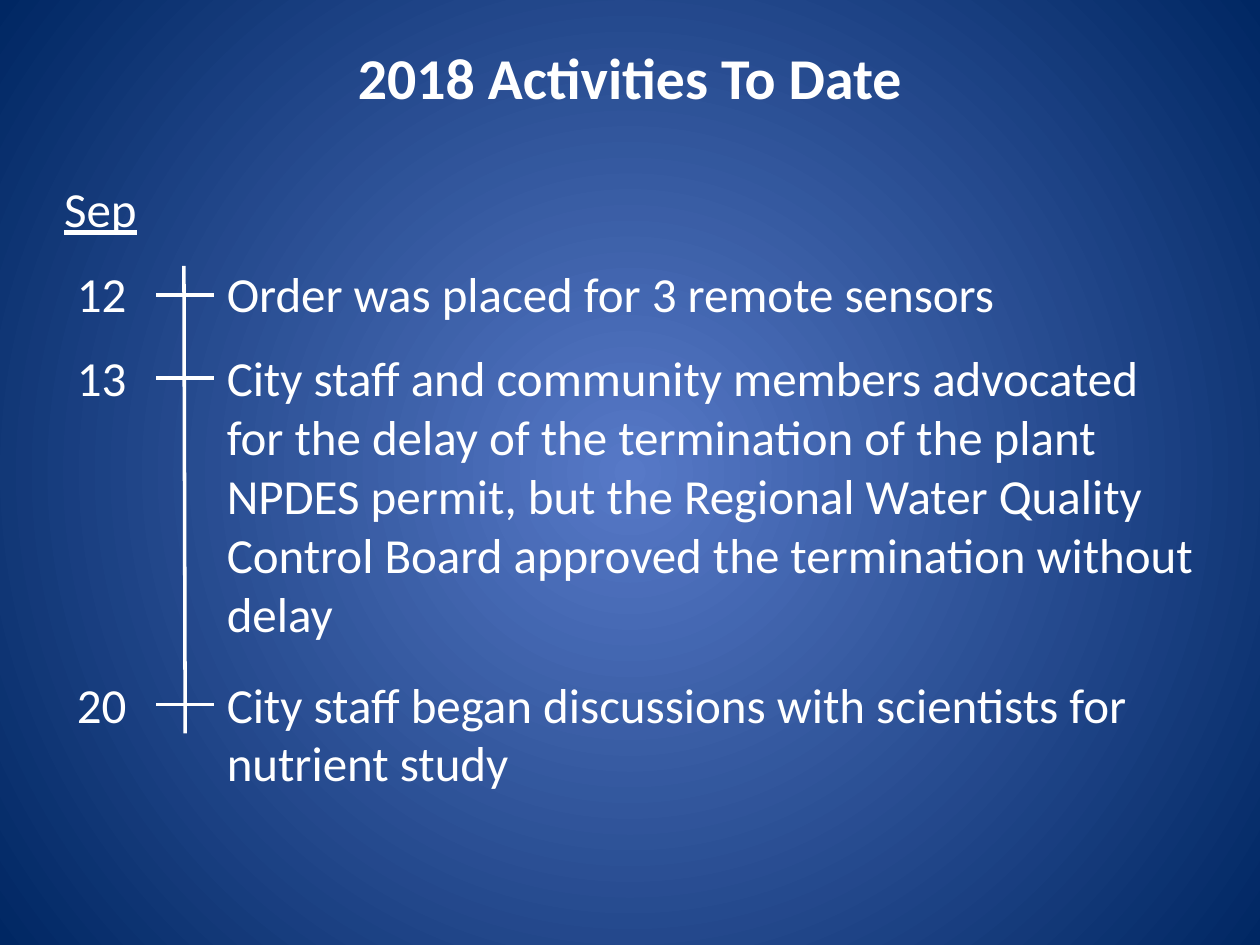
from lxml import etree
from pptx import Presentation
from pptx.dml.color import RGBColor
from pptx.enum.shapes import MSO_CONNECTOR as Connector
from pptx.enum.text import MSO_ANCHOR as Anchor, PP_ALIGN as Align
from pptx.oxml.ns import qn
from pptx.util import Emu, Pt

PX = 9144  # 100 px to the inch
WIDTH, HEIGHT = 1000, 750
FONT = "Calibri"
WHITE = RGBColor(0xFF, 0xFF, 0xFF)
GLOW = RGBColor(0x57, 0x79, 0xC7)
NAVY = RGBColor(0x00, 0x27, 0x63)

# Day, top of its row, height of its text, tick offset, text
EVENTS = [
    ("12", 205, 63, 29, "Order was placed for 3 remote sensors"),
    ("13", 272, 240, 28,
     "City staff and community members advocated for the delay of the "
     "termination of the plant NPDES permit, but the Regional Water Quality "
     "Control Board approved the termination without delay"),
    ("20", 531, 99, 28,
     "City staff began discussions with scientists for nutrient study"),
]


def px(*lengths):
    return [Emu(length * PX) for length in lengths]


def write(frame, text, size, inset=4):
    frame.word_wrap = True
    frame.margin_left = frame.margin_right = Emu(inset * PX)
    frame.margin_top = frame.margin_bottom = Emu(min(inset, 5) * PX)
    frame.text = text
    font = frame.paragraphs[0].runs[0].font
    font.name, font.size, font.color.rgb = FONT, Pt(size), WHITE
    return font


def add_text(page, left, top, width, height, text, inset=4):
    box = page.shapes.add_textbox(*px(left, top, width, height))
    return write(box.text_frame, text, 28, inset)


def add_line(page, *ends):
    line = page.shapes.add_connector(Connector.STRAIGHT, *px(*ends))
    line.line.color.rgb = WHITE
    line.line.width = Pt(2)
    etree.SubElement(line.element.spPr, qn("a:effectLst"))


def paint_background(page):
    fill = page.background.fill
    fill.gradient()
    for stop, color in zip(fill.gradient_stops, (GLOW, NAVY)):
        stop.color.rgb = color
    # Swap the linear direction for a circle spreading from the centre
    gradient = page.element.find(".//" + qn("a:gradFill"))
    for linear in gradient.findall(qn("a:lin")):
        gradient.remove(linear)
    circle = etree.SubElement(gradient, qn("a:path"), path="circle")
    sides = dict.fromkeys("ltrb", "50000")
    etree.SubElement(circle, qn("a:fillToRect"), sides)


def add_title(page, left, top, width, height):
    title = page.shapes.title
    title.left, title.top, title.width, title.height = px(left, top, width, height)
    write(title.text_frame, "2018 Activities To Date", 33, 10).bold = True
    title.text_frame.vertical_anchor = Anchor.MIDDLE
    title.text_frame.paragraphs[0].alignment = Align.CENTER


def add_timeline(page, left, top, width, height):
    # Month heading and the vertical axis
    add_text(page, left, top, 112, 57, "Sep", 10).underline = True
    add_line(page, left + 105, top + 74, left + 106, top + height)

    # One row per event: day, tick and description
    for day, row_top, text_height, tick, text in EVENTS:
        add_text(page, left + 16, row_top, 50, 39, day)
        add_line(page, left + 83, row_top + tick, left + 129, row_top + tick)
        add_text(page, left + 135, row_top, width - 135, text_height, text)


def main():
    deck = Presentation()
    deck.slide_width, deck.slide_height = px(WIDTH, HEIGHT)
    page = deck.slides.add_slide(deck.slide_layouts[5])
    paint_background(page)
    add_title(page, 50, 28, 900, 65)
    add_timeline(page, 41, 137, 918, 445)
    deck.save("out.pptx")


if __name__ == "__main__":
    main()
